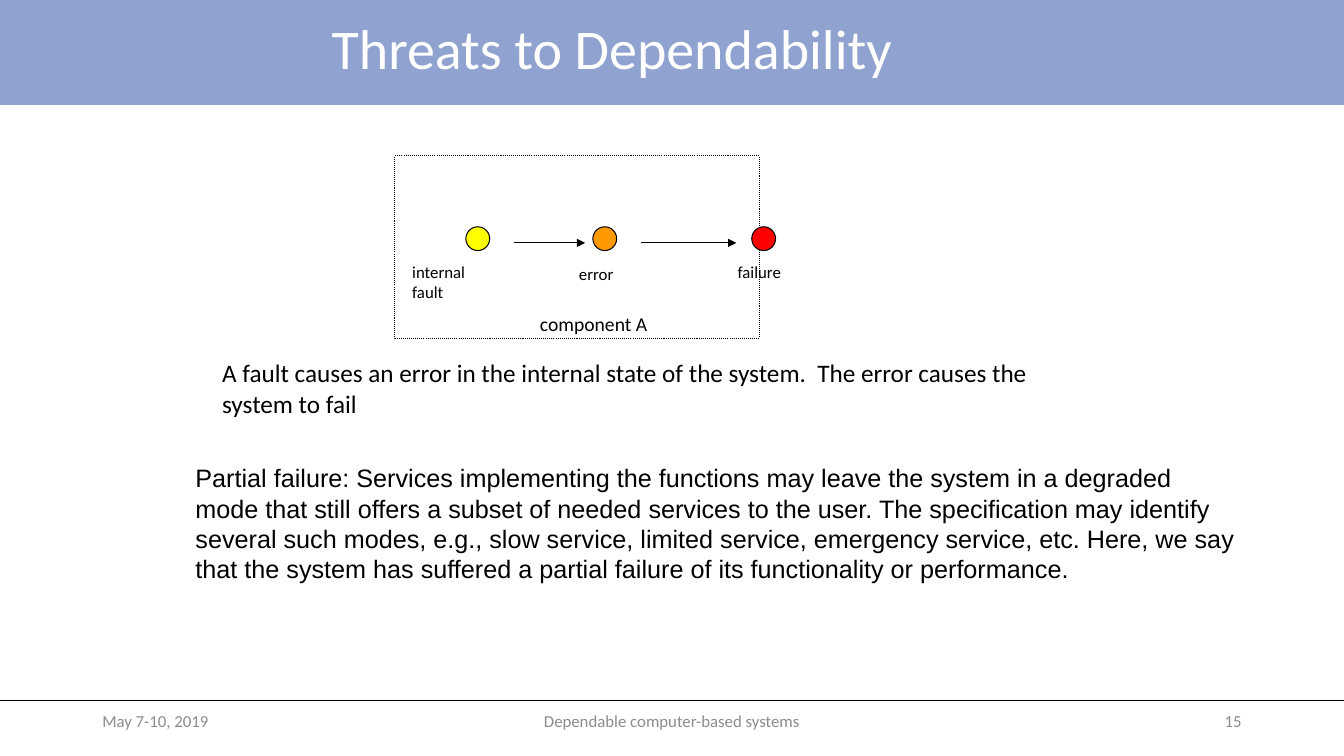
"""Build the slide on threats to dependability."""
import lxml.etree
import pptx
import pptx.dml.color
import pptx.enum.dml
import pptx.enum.shapes
import pptx.enum.text
import pptx.oxml.ns
import pptx.util

Pt = pptx.util.Pt
ALIGN = pptx.enum.text.PP_ALIGN
ANCHOR = pptx.enum.text.MSO_ANCHOR
SHAPE = pptx.enum.shapes.MSO_SHAPE
COLORS = {
    "band": "90A2CF", "white": "FFFFFF", "black": "000000", "footer": "8C8C8C",
    "fault": "FFFF00", "error": "FF9900", "failure": "FF0000",
}


def rgb(name):
    return pptx.dml.color.RGBColor.from_string(COLORS[name])


def add_text(slide, box, lines, size, color="black", font="Calibri",
             align=ALIGN.LEFT, anchor=ANCHOR.TOP, wrap=True):
    shape = slide.shapes.add_textbox(*map(Pt, box))
    frame = shape.text_frame
    frame.word_wrap = wrap
    frame.vertical_anchor = anchor
    frame.text = "\n".join(lines)
    for paragraph in frame.paragraphs:
        paragraph.alignment = align
        paragraph.font.size = Pt(size)
        paragraph.font.name = font
        paragraph.font.color.rgb = rgb(color)
    return frame


def add_shape(slide, kind, box, fill, outlined=True):
    shape = slide.shapes.add_shape(kind, *map(Pt, box))
    shape.shadow.inherit = False
    shape.fill.solid()
    shape.fill.fore_color.rgb = rgb(fill)
    if outlined:
        shape.line.color.rgb = rgb("black")
        shape.line.width = Pt(0.75)
    else:
        shape.line.fill.background()
    return shape


def add_line(slide, left, right, y, width, arrow=False):
    connector = slide.shapes.add_connector(
        pptx.enum.shapes.MSO_CONNECTOR.STRAIGHT, Pt(left), Pt(y), Pt(right), Pt(y))
    connector.line.color.rgb = rgb("black")
    connector.line.width = Pt(width)
    qn = pptx.oxml.ns.qn
    if arrow:
        line = connector.line._get_or_add_ln()
        lxml.etree.SubElement(line, qn("a:tailEnd"), type="triangle")
    lxml.etree.SubElement(connector._element.spPr, qn("a:effectLst"))


def add_header_and_footer(slide):
    add_shape(slide, SHAPE.RECTANGLE, (0, 0, 960, 75), "band", outlined=False)
    add_line(slide, 0, 960, 500.4, 0.5)
    title = add_text(slide, (0, 0, 874, 73.4), ["Threats to Dependability"], 40,
                     "white", align=ALIGN.CENTER, anchor=ANCHOR.MIDDLE)
    title.paragraphs[0].line_spacing = 0.9
    for left, width, text, align in (
        (66, 216, "May 7-10, 2019", ALIGN.LEFT),
        (318, 324, "Dependable computer-based systems", ALIGN.CENTER),
        (678, 216, "15", ALIGN.RIGHT),
    ):
        add_text(slide, (left, 500.4, width, 28.8), [text], 12, "footer",
                 align=align, anchor=ANCHOR.MIDDLE)


def add_component(slide):
    frame = add_shape(slide, SHAPE.RECTANGLE, (282, 111.4, 260.6, 130.3), "white")
    frame.line.dash_style = pptx.enum.dml.MSO_LINE.ROUND_DOT
    for state, left, label_box, lines in (
        ("fault", 332.8, (287.4, 183.6, 53.3, 36), ["internal", "fault"]),
        ("error", 423.5, (406.5, 185.2, 39.8, 21.6), ["error"]),
        ("failure", 537, (519.8, 183.6, 46.8, 21.6), ["failure"]),
    ):
        add_shape(slide, SHAPE.OVAL, (left, 162, 17, 17), state)
        add_text(slide, label_box, lines, 12, wrap=False)
    for left, right in ((367, 418), (458, 526)):
        add_line(slide, left, right, 173.5, 0.75, arrow=True)
    add_text(slide, (378.6, 219, 92, 24.5), ["component A"], 14, wrap=False)


def add_explanations(slide):
    add_text(slide, (151.6, 252, 590, 50.4), [
        "A fault causes an error in the internal state of the system.  "
        "The error causes the system to fail"], 18)
    partial = add_text(slide, (110, 327, 783.4, 95), [
        "Partial failure: Services implementing the functions may leave the system "
        "in a degraded mode that still offers a subset of needed services to the user. "
        "The specification may identify several such modes, e.g., slow service, "
        "limited service, emergency service, etc. Here, we say that the system has "
        "suffered a partial failure of its functionality or performance."],
        18, font="Arial")
    partial.paragraphs[0]._p.get_or_add_pPr().set("marL", str(Pt(22.5)))


def main():
    presentation = pptx.Presentation()
    presentation.slide_width = Pt(960)
    presentation.slide_height = Pt(540)
    slide = presentation.slides.add_slide(presentation.slide_layouts[6])
    add_header_and_footer(slide)
    add_component(slide)
    add_explanations(slide)
    presentation.save("out.pptx")


if __name__ == "__main__":
    main()
